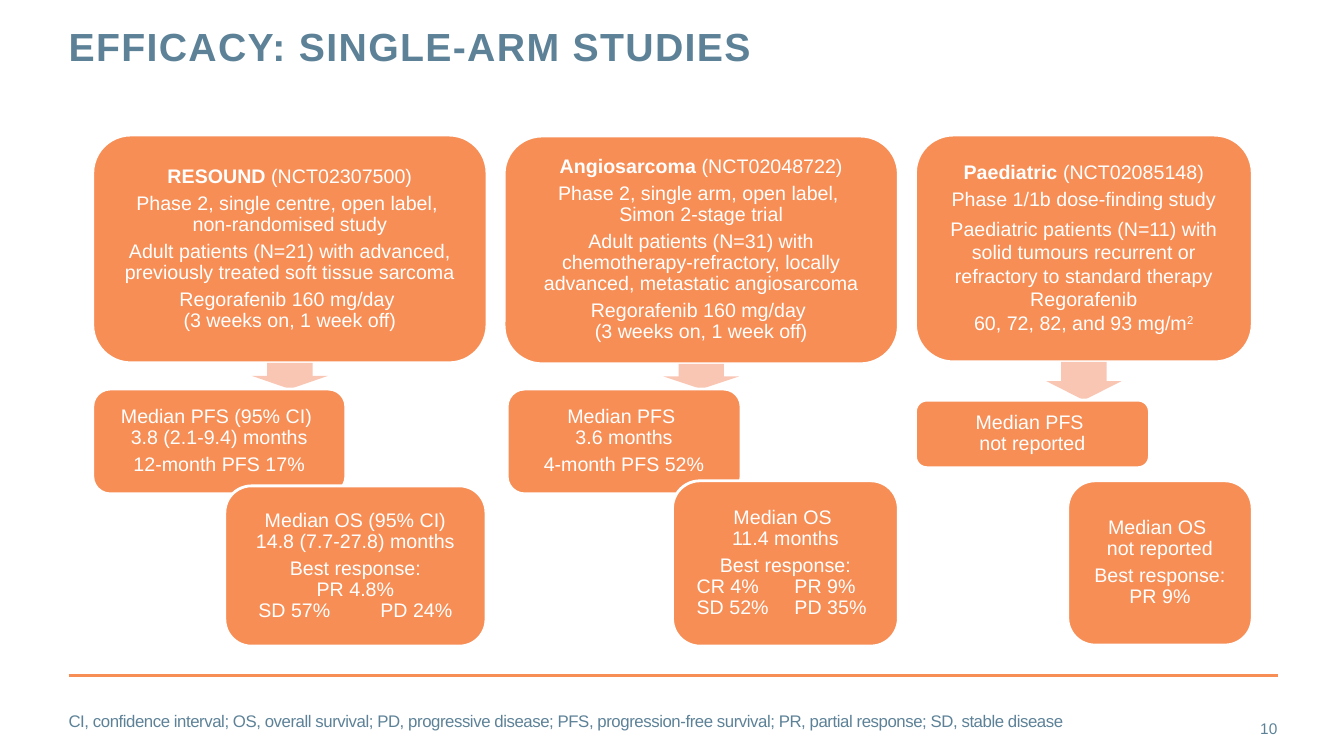
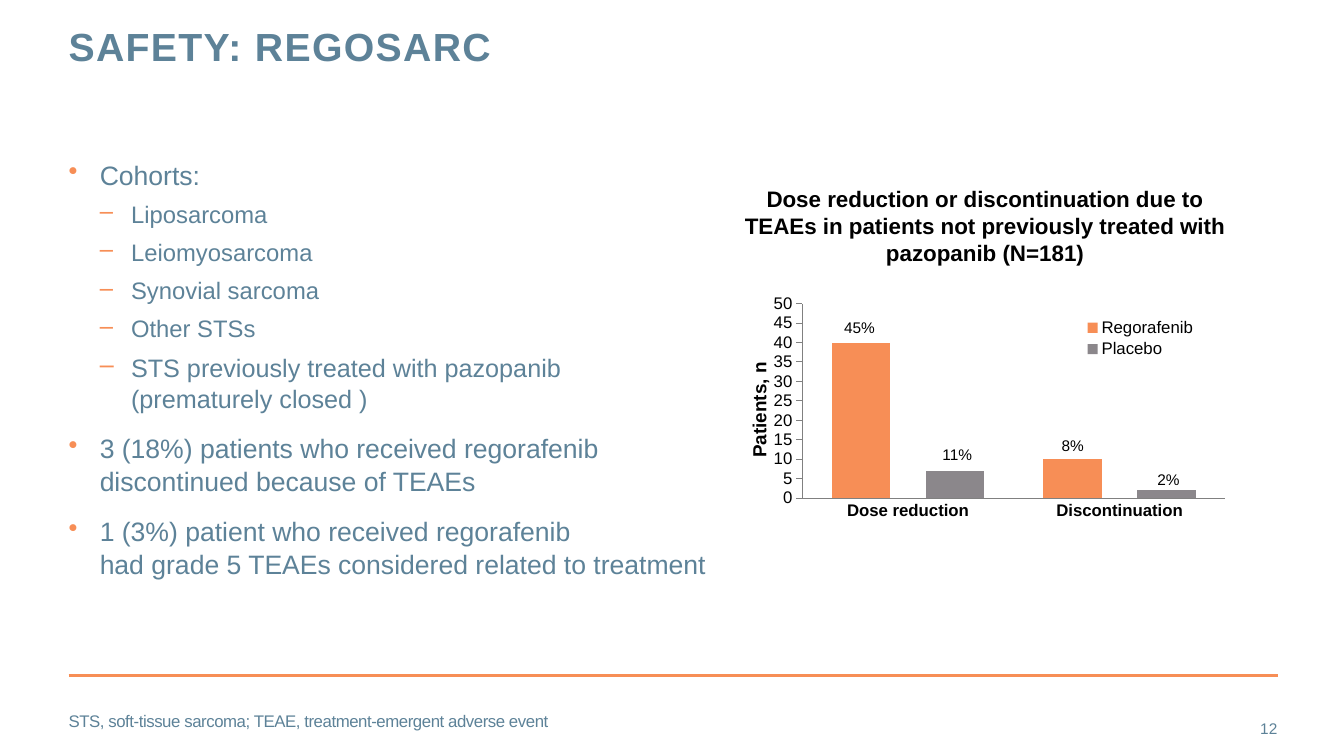
from dataclasses import dataclass
from typing import Optional

from lxml import etree
from pptx import Presentation
from pptx.chart.data import CategoryChartData
from pptx.dml.color import RGBColor
from pptx.enum.chart import XL_CHART_TYPE as ChartType
from pptx.enum.chart import XL_LEGEND_POSITION as LegendPosition
from pptx.enum.chart import XL_TICK_MARK as TickMark
from pptx.enum.shapes import MSO_CONNECTOR as Connector
from pptx.enum.shapes import MSO_SHAPE as ShapeKind
from pptx.enum.text import MSO_ANCHOR as Anchor
from pptx.enum.text import MSO_AUTO_SIZE as AutoSize
from pptx.enum.text import PP_ALIGN as Align
from pptx.oxml.ns import qn
from pptx.util import Inches, Pt

FONT = "Arial"
ORANGE = RGBColor(0xF7, 0x8E, 0x56)
PINK = RGBColor(0xFA, 0xC6, 0xB4)
SLATE = RGBColor(0x5D, 0x82, 0x98)
GREY = RGBColor(0x8B, 0x87, 0x8B)
AXIS_GREY = RGBColor(0x80, 0x80, 0x80)
WHITE = RGBColor(0xFF, 0xFF, 0xFF)
BLACK = RGBColor(0, 0, 0)

MARGIN, CONTENT_WIDTH = 0.68, 12.0
INDENT = 0.31


@dataclass(frozen=True)
class Line:
    """One paragraph of a study box."""
    text: str
    lead: str = ""
    superscript: str = ""
    align: Align = Align.CENTER
    spacing: float = 0.9
    after: float = 4
    tab: Optional[float] = None


@dataclass(frozen=True)
class Box:
    left: float
    top: float
    width: float
    height: float
    lines: tuple[Line, ...]


@dataclass(frozen=True)
class Study:
    design: Box
    progression: Box
    survival: Box


@dataclass(frozen=True)
class Bullet:
    text: str
    level: int = 0
    size: float = 19


@dataclass(frozen=True)
class BarLabel:
    text: str
    left: float
    top: float
    width: float


DOSING = Line("Regorafenib 160 mg/day \n(3 weeks on, 1 week off)")

STUDIES = (
    Study(
        Box(0.92, 1.34, 3.91, 2.26, (
            Line("(NCT02307500)", lead="RESOUND "),
            Line("Phase 2, single centre, open label, \nnon-randomised study"),
            Line("Adult patients (N=21) with advanced, previously treated soft tissue sarcoma"),
            DOSING)),
        Box(0.92, 3.86, 2.51, 1.04, (
            Line("Median PFS (95% CI) \n3.8 (2.1-9.4) months"),
            Line("12-month PFS 17%"))),
        Box(2.23, 4.82, 2.59, 1.59, (
            Line("Median OS (95% CI)\n14.8 (7.7-27.8) months"),
            Line("Best response:\nPR 4.8%\nSD 57%\tPD 24%", tab=1.21))),
    ),
    Study(
        Box(5, 1.35, 3.91, 2.26, (
            Line("(NCT02048722)", lead="Angiosarcoma "),
            Line("Phase 2, single arm, open label, \nSimon 2-stage trial"),
            Line("Adult patients (N=31) with chemotherapy-refractory, locally advanced, "
                 "metastatic angiosarcoma"),
            DOSING)),
        Box(5.03, 3.86, 2.32, 1.04, (
            Line("Median PFS \n3.6 months"),
            Line("4-month PFS 52%"))),
        Box(6.67, 4.77, 2.24, 1.64, (
            Line("Median OS \n11.4 months"),
            Line("Best response:", after=0),
            Line("CR 4%\tPR 9%\nSD 52%\tPD 35%", align=Align.LEFT, tab=0.97))),
    ),
    Study(
        Box(9.08, 1.34, 3.34, 2.25, (
            Line("(NCT02085148)", lead="Paediatric "),
            Line("Phase 1/1b dose-finding study"),
            Line("Paediatric patients (N=11) with solid tumours recurrent or refractory "
                 "to standard therapy", spacing=1.0, after=0),
            Line("Regorafenib", spacing=1.0, after=0),
            Line("60, 72, 82, and 93 mg/m", superscript="2", spacing=1.0, after=0))),
        Box(9.08, 3.97, 2.32, 0.67, (Line("Median PFS \nnot reported"),)),
        Box(10.59, 4.77, 1.83, 1.63, (
            Line("Median OS \nnot reported"),
            Line("Best response:\nPR 9%"))),
    ),
)

BULLETS = (
    Bullet("Cohorts:"),
    Bullet("Liposarcoma", 1, 17),
    Bullet("Leiomyosarcoma", 1, 17),
    Bullet("Synovial sarcoma", 1, 17),
    Bullet("Other STSs", 1, 17),
    Bullet("STS previously treated with pazopanib\n(prematurely closed )", 1, 18),
    Bullet("3 (18%) patients who received regorafenib\ndiscontinued because of TEAEs"),
    Bullet("1 (3%) patient who received regorafenib\n"
           "had grade 5 TEAEs considered related to treatment"),
)

BAR_LABELS = (
    BarLabel("45%", 8.27, 3.11, 0.51),
    BarLabel("11%", 9.24, 4.37, 0.51),
    BarLabel("8%", 10.43, 4.28, 0.42),
    BarLabel("2%", 11.38, 4.61, 0.42),
)


# Text helpers
def set_font(font, size: float, color: RGBColor, bold: bool = False) -> None:
    font.name, font.size, font.bold = FONT, Pt(size), bold
    font.color.rgb = color


def set_tracking(paragraph, points: float) -> None:
    paragraph._p.pPr.find(qn("a:defRPr")).set("spc", str(round(points * 100)))


def set_insets(frame, inches: float) -> None:
    frame.margin_left = frame.margin_right = Inches(inches)
    frame.margin_top = frame.margin_bottom = Inches(inches)


def next_paragraph(frame, index: int):
    return frame.add_paragraph() if index else frame.paragraphs[0]


def add_text(slide, left: float, top: float, width: float, height: float, text: str,
             size: float, color: RGBColor, align: Align = Align.LEFT, bold: bool = False,
             anchor: Anchor = Anchor.TOP, inset: Optional[float] = None, wrap: bool = True):
    box = slide.shapes.add_textbox(Inches(left), Inches(top), Inches(width), Inches(height))
    frame = box.text_frame
    frame.word_wrap, frame.vertical_anchor = wrap, anchor
    if inset is not None:
        set_insets(frame, inset)
    paragraph = frame.paragraphs[0]
    paragraph.text, paragraph.alignment = text, align
    set_font(paragraph.font, size, color, bold)
    return paragraph


# Parts shared by the slides
def add_slide(presentation, title: str, number: int, footnote: str):
    slide = presentation.slides.add_slide(presentation.slide_layouts[5])

    rule = slide.shapes.add_connector(Connector.STRAIGHT, Inches(MARGIN), Inches(6.7),
                                      Inches(MARGIN + CONTENT_WIDTH), Inches(6.7))
    rule.line.color.rgb, rule.line.width = ORANGE, Pt(2)
    etree.SubElement(rule._element.spPr, qn("a:effectLst"))

    heading = slide.shapes.title
    heading.left, heading.top = Inches(MARGIN), Inches(0.27)
    heading.width, heading.height = Inches(9.56), Inches(0.88)
    frame = heading.text_frame
    frame.auto_size, frame.vertical_anchor = AutoSize.NONE, Anchor.TOP
    set_insets(frame, 0)
    paragraph = frame.paragraphs[0]
    paragraph.text, paragraph.alignment = title, Align.LEFT
    paragraph.line_spacing = Pt(30)
    set_font(paragraph.font, 28, SLATE, bold=True)
    set_tracking(paragraph, 1)

    add_text(slide, 11.81, 7.03, 0.86, 0.4, str(number), 11, SLATE,
             align=Align.RIGHT, anchor=Anchor.MIDDLE, inset=0)
    note = add_text(slide, MARGIN, 6.95, 10.95, 0.4, footnote, 12, SLATE,
                    anchor=Anchor.MIDDLE, inset=0)
    set_tracking(note, -0.3)
    return slide


# Study boxes
def write_line(paragraph, line: Line) -> None:
    if line.lead:
        lead = paragraph.add_run()
        lead.text, lead.font.bold = line.lead, True
    for index, part in enumerate(line.text.split("\n")):
        if index:
            paragraph.add_line_break()
        paragraph.add_run().text = part
    if line.superscript:
        raised = paragraph.add_run()
        raised.text = line.superscript
        raised._r.get_or_add_rPr().set("baseline", "30000")
    if line.tab:
        tabs = etree.SubElement(paragraph._p.get_or_add_pPr(), qn("a:tabLst"))
        etree.SubElement(tabs, qn("a:tab"), pos=str(Inches(line.tab)), algn="l")
    paragraph.alignment, paragraph.line_spacing = line.align, line.spacing
    paragraph.space_after = Pt(line.after)
    set_font(paragraph.font, 14, WHITE)


def add_box(slide, box: Box) -> None:
    shape = slide.shapes.add_shape(ShapeKind.ROUNDED_RECTANGLE, Inches(box.left),
                                   Inches(box.top), Inches(box.width), Inches(box.height))
    shape.shadow.inherit = False
    shape.fill.solid()
    shape.fill.fore_color.rgb = ORANGE
    shape.line.color.rgb, shape.line.width = WHITE, Pt(2)
    frame = shape.text_frame
    frame.word_wrap, frame.vertical_anchor = True, Anchor.MIDDLE
    set_insets(frame, 0.16)
    for index, line in enumerate(box.lines):
        write_line(next_paragraph(frame, index), line)


def add_arrow(slide, upper: Box, lower: Box) -> None:
    width, top = 0.75, upper.top + upper.height
    left = upper.left + (upper.width - width) / 2
    arrow = slide.shapes.add_shape(ShapeKind.DOWN_ARROW, Inches(left), Inches(top),
                                   Inches(width), Inches(lower.top - top))
    arrow.adjustments[0], arrow.adjustments[1] = 0.6, 0.5
    arrow.shadow.inherit = False
    arrow.fill.solid()
    arrow.fill.fore_color.rgb = PINK
    arrow.line.fill.background()


# Bulleted list
def add_bullets(slide, bullets: tuple[Bullet, ...]) -> None:
    box = slide.shapes.add_textbox(Inches(MARGIN), Inches(1.56),
                                   Inches(CONTENT_WIDTH), Inches(3.77))
    frame = box.text_frame
    frame.word_wrap = True
    set_insets(frame, 0)
    for index, bullet in enumerate(bullets):
        paragraph = next_paragraph(frame, index)
        paragraph.text, paragraph.level = bullet.text, bullet.level
        properties = paragraph._p.get_or_add_pPr()
        properties.set("marL", str(Inches(INDENT * (bullet.level + 1))))
        properties.set("indent", str(-Inches(INDENT)))
        color = etree.SubElement(properties, qn("a:buClr"))
        etree.SubElement(color, qn("a:srgbClr"), val=str(ORANGE))
        etree.SubElement(properties, qn("a:buChar"), char="•–"[bullet.level])
        paragraph.line_spacing = 1.04
        if index:
            paragraph.space_before = Pt(6 if bullet.level else 12)
        set_font(paragraph.font, bullet.size, SLATE)


# Chart
def set_layout(element, index: int, inner: bool = False, **place: float) -> None:
    for old in element.findall(qn("c:layout")):
        element.remove(old)
    layout = etree.Element(qn("c:layout"))
    manual = etree.SubElement(layout, qn("c:manualLayout"))
    if inner:
        etree.SubElement(manual, qn("c:layoutTarget"), val="inner")
    for name in ("xMode", "yMode"):
        etree.SubElement(manual, qn(f"c:{name}"), val="edge")
    for name, value in place.items():
        etree.SubElement(manual, qn(f"c:{name}"), val=str(value))
    element.insert(index, layout)


def add_dose_chart(slide) -> None:
    data = CategoryChartData()
    data.categories = ("Dose reduction", "Discontinuation")
    data.add_series("Regorafenib", (40, 10))
    data.add_series("Placebo", (7, 2))
    chart = slide.shapes.add_chart(ChartType.COLUMN_CLUSTERED, Inches(7.33), Inches(2.84),
                                   Inches(4.83), Inches(2.88), data).chart
    set_font(chart.font, 10, BLACK)
    chart.has_title = False
    set_layout(chart._chartSpace.find(".//" + qn("c:plotArea")), 0, inner=True,
               x=0.13, y=0.06, w=0.87, h=0.67)

    plot = chart.plots[0]
    plot.gap_width, plot.overlap, plot.vary_by_categories = 100, -60, False
    for series, color in zip(plot.series, (ORANGE, GREY)):
        series.format.fill.solid()
        series.format.fill.fore_color.rgb = color

    category_axis, value_axis = chart.category_axis, chart.value_axis
    for axis, tick, bold in ((category_axis, TickMark.NONE, True),
                             (value_axis, TickMark.OUTSIDE, False)):
        axis.major_tick_mark, axis.minor_tick_mark = tick, TickMark.NONE
        axis.has_major_gridlines = False
        axis.format.line.color.rgb, axis.format.line.width = AXIS_GREY, Pt(0.75)
        set_font(axis.tick_labels.font, 12, BLACK, bold)
    value_axis.minimum_scale, value_axis.maximum_scale, value_axis.major_unit = 0, 50, 5
    axis_title = value_axis.axis_title
    paragraph = axis_title.text_frame.paragraphs[0]
    paragraph.text = "Patients, n"
    set_font(paragraph.font, 13.5, BLACK, bold=True)
    set_layout(axis_title._element, 1, x=0.01, y=0.25)

    chart.has_legend = True
    legend = chart.legend
    legend.position, legend.include_in_layout = LegendPosition.RIGHT, False
    set_font(legend.font, 12, BLACK)
    set_layout(legend._element, 1, x=0.7, y=0.1, w=0.25, h=0.16)


def build_efficacy(presentation) -> None:
    slide = add_slide(
        presentation, "EFFICACY: SINGLE-ARM STUDIES", 10,
        "CI, confidence interval; OS, overall survival; PD, progressive disease; "
        "PFS, progression-free survival; PR, partial response; SD, stable disease")
    for study in STUDIES:
        add_box(slide, study.design)
        add_arrow(slide, study.design, study.progression)
        add_box(slide, study.progression)
        add_box(slide, study.survival)


def build_safety(presentation) -> None:
    slide = add_slide(presentation, "SAFETY: REGOSARC", 12,
                      "STS, soft-tissue sarcoma; TEAE, treatment-emergent adverse event")
    add_dose_chart(slide)
    add_text(slide, 7.24, 1.79, 5.06, 0.4,
             "Dose reduction or discontinuation due to TEAEs in patients "
             "not previously treated with pazopanib (N=181)",
             16, BLACK, align=Align.CENTER, bold=True)
    for label in BAR_LABELS:
        add_text(slide, label.left, label.top, label.width, 0.29, label.text, 11, BLACK,
                 align=Align.CENTER, wrap=False)
    add_bullets(slide, BULLETS)


def main() -> None:
    presentation = Presentation()
    presentation.slide_width, presentation.slide_height = Inches(13.33), Inches(7.5)
    build_efficacy(presentation)
    build_safety(presentation)
    presentation.save("out.pptx")


if __name__ == "__main__":
    main()
